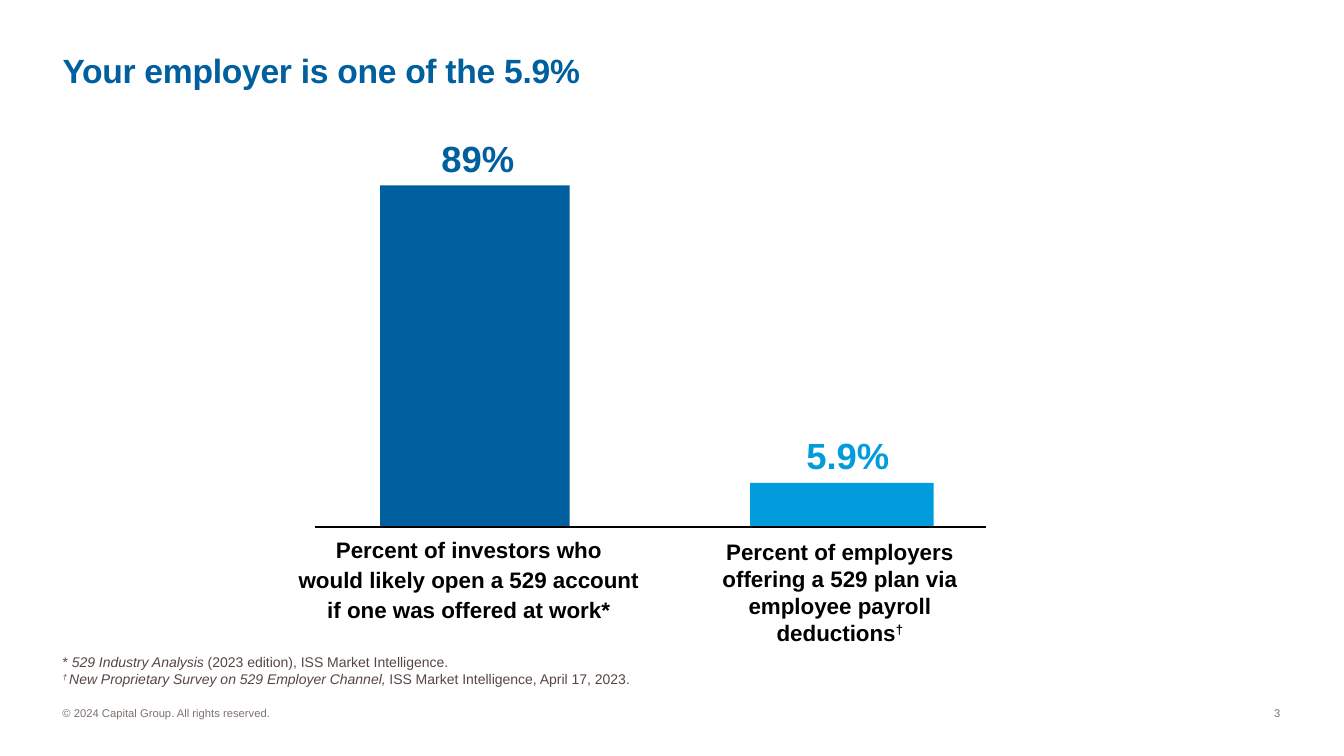
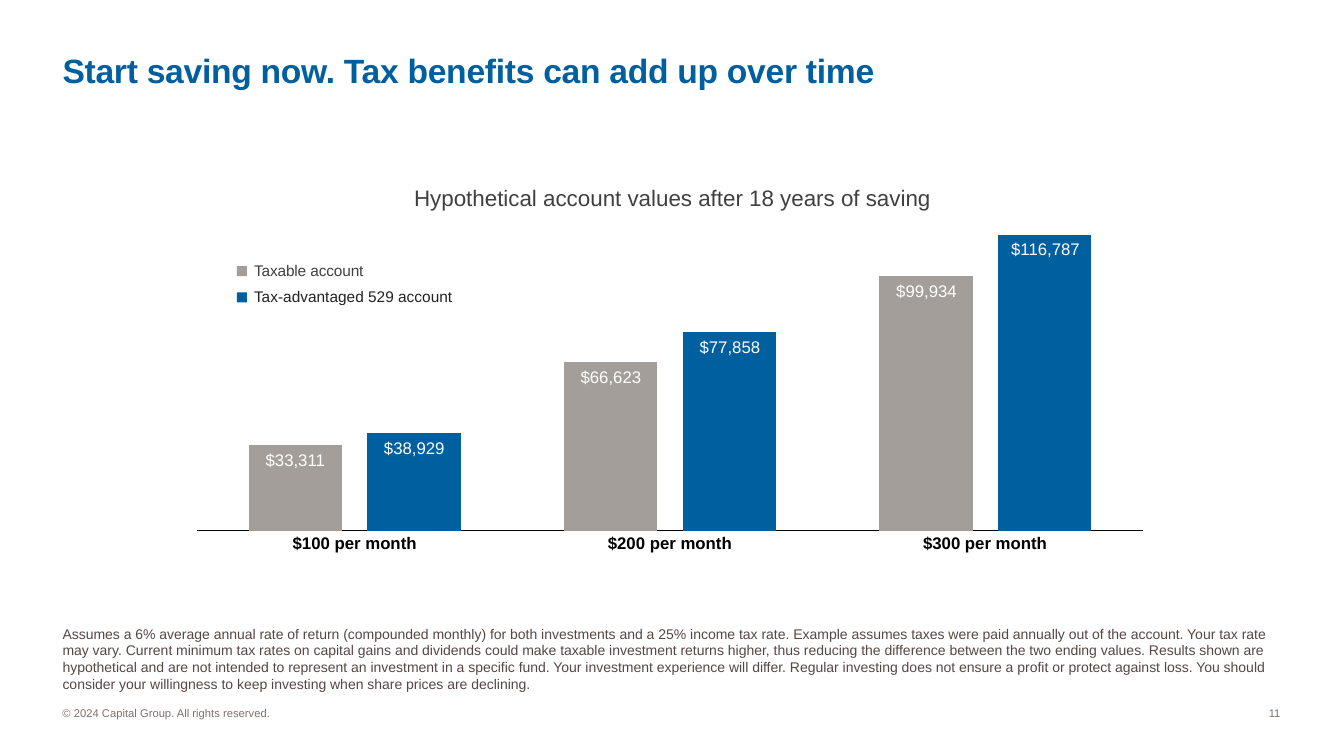
from lxml.etree import SubElement
from pptx import Presentation
from pptx.chart.data import CategoryChartData as Data
from pptx.dml.color import RGBColor
from pptx.enum.chart import XL_CHART_TYPE as Kind, XL_TICK_LABEL_POSITION as Label, XL_TICK_MARK as Tick
from pptx.enum.shapes import MSO_CONNECTOR as Link, MSO_SHAPE as Form
from pptx.enum.text import MSO_ANCHOR as Anchor, MSO_AUTO_SIZE as Fit, PP_ALIGN as Align
from pptx.oxml import parse_xml
from pptx.oxml.ns import nsdecls, qn
from pptx.util import Inches, Pt

FONT = "Arial"
BLUE, SKY, GREY = "005F9E", "009CDC", "A39E99"
BLACK, WHITE, DARK, INK = "000000", "FFFFFF", "404040", "222222"
BROWN, FAINT = "554742", "7D726D"
LEFT, WIDE = 0.62, 12.08


def color(code):
    return RGBColor.from_string(code)


class Deck:
    """Hold the shared style and the current slide."""

    def __init__(self):
        self.show = Presentation()
        self.show.slide_width = Inches(13.33)
        self.show.slide_height = Inches(7.5)
        self.slide = None

    def start(self, title, number):
        self.slide = self.show.slides.add_slide(self.show.slide_layouts[5])
        head = self.slide.shapes.title
        self.place(head, LEFT, 0, WIDE, 0.9)
        self.fill(head.text_frame, [title], 24, BLUE, bold=True, anchor=Anchor.BOTTOM, track=-0.2)
        head.text_frame.paragraphs[0].line_spacing = 0.95
        self.text("© 2024 Capital Group. All rights reserved.", LEFT, 7, 2.5, 0.14, 8, FAINT,
                  anchor=Anchor.BOTTOM)
        self.text(number, 11.92, 7, 0.78, 0.14, 8, FAINT, align=Align.RIGHT, anchor=Anchor.BOTTOM)

    def place(self, shape, x, y, w, h):
        shape.left, shape.top, shape.width, shape.height = map(Inches, (x, y, w, h))

    def fill(self, frame, lines, size, tint, bold=False, align=Align.LEFT,
             anchor=Anchor.TOP, track=0, gap=0):
        frame.word_wrap = True
        frame.auto_size = Fit.NONE
        frame.vertical_anchor = anchor
        frame.margin_left = frame.margin_right = frame.margin_top = frame.margin_bottom = 0
        for row, line in enumerate(lines):
            para = frame.add_paragraph() if row else frame.paragraphs[0]
            para.alignment = align
            para.space_before = Pt(gap if row else 0)
            for part, mark in [(line, "")] if isinstance(line, str) else line:
                run = para.add_run()
                run.text = part
                font = run.font
                font.name, font.size, font.bold = FONT, Pt(size), bold
                font.italic = "i" in mark
                font.color.rgb = color(tint)
                props = run._r.get_or_add_rPr()
                if track:
                    props.set("spc", str(round(track * 100)))
                if "^" in mark:
                    props.set("baseline", "30000")

    def text(self, lines, x, y, w, h, size, tint, **style):
        box = self.slide.shapes.add_textbox(*map(Inches, (x, y, w, h)))
        self.fill(box.text_frame, [lines] if isinstance(lines, str) else lines, size, tint, **style)

    def note(self, lines, base):
        self.text(lines, LEFT, base - 0.7, 12.01, 0.7, 10, BROWN, anchor=Anchor.BOTTOM)

    def block(self, x, y, w, h, tint):
        box = self.slide.shapes.add_shape(Form.RECTANGLE, *map(Inches, (x, y, w, h)))
        box.shadow.inherit = False
        box.fill.solid()
        box.fill.fore_color.rgb = color(tint)
        box.line.fill.background()

    def rule(self, x, y, end):
        line = self.slide.shapes.add_connector(Link.STRAIGHT, *map(Inches, (x, y, end, y)))
        line.line.color.rgb = color(BLACK)
        line.line.width = Pt(1)
        SubElement(line._element.spPr, qn("a:effectLst"))

    def chart(self, cats, rows, top, x, y, w, h, inner):
        data = Data()
        data.categories = cats
        for name, vals, _ in rows:
            data.add_series(name, vals)
        frame = self.slide.shapes.add_chart(
            Kind.COLUMN_CLUSTERED, *map(Inches, (x, y, w, h)), data)
        chart = frame.chart
        chart.has_legend = chart.has_title = False
        chart.font.name, chart.font.size = FONT, Pt(10)
        chart.font.color.rgb = color(BLACK)
        plot = chart.plots[0]
        plot.vary_by_categories = False
        plot.gap_width, plot.overlap = 111, -27
        for bars, (_, _, tint) in zip(plot.series, rows):
            bars.format.fill.solid()
            bars.format.fill.fore_color.rgb = color(tint)
        base, side = chart.category_axis, chart.value_axis
        for axis in (base, side):
            axis.major_tick_mark = axis.minor_tick_mark = Tick.NONE
            axis.has_major_gridlines = False
        font = base.tick_labels.font
        font.name, font.size, font.bold = FONT, Pt(12), True
        font.color.rgb = color(BLACK)
        base.format.line.color.rgb = color(BLACK)
        base.format.line.width = Pt(0.5)
        side.tick_label_position = Label.NONE
        side.minimum_scale, side.maximum_scale = 0, top
        side.format.line.fill.background()
        self.fit(chart, inner)

    def fit(self, chart, inner):
        area = chart._chartSpace.chart.plotArea
        for old in area.findall(qn("c:layout")):
            area.remove(old)
        modes = "".join(f'<c:{key}Mode val="edge"/>' for key in "xy")
        sizes = "".join(f'<c:{key} val="{val}"/>' for key, val in zip("xywh", inner))
        area.insert(0, parse_xml(
            f'<c:layout {nsdecls("c")}><c:manualLayout><c:layoutTarget val="inner"/>'
            f"{modes}{sizes}</c:manualLayout></c:layout>"))


def demand(deck):
    deck.start("Your employer is one of the 5.9%", "3")
    deck.note([
        [("* ", ""), ("529 Industry Analysis", "i"), (" (2023 edition), ISS Market Intelligence.", "")],
        [("† ", "i^"), ("New Proprietary Survey on 529 Employer Channel, ", "i"),
         ("ISS Market Intelligence, April 17, 2023.", "")],
    ], 6.82)
    floor = 5.23
    for x, w, h, mid, share, tint in (
        (3.77, 1.88, 3.39, 4.74, "89%", BLUE),
        (7.44, 1.82, 0.44, 8.41, "5.9%", SKY),
    ):
        deck.block(x, floor - h, w, h, tint)
        deck.text(share, mid - 0.6, floor - h - 0.49, 1.2, 0.44, 26, tint, bold=True, align=Align.CENTER)
    deck.rule(3.12, floor, 9.78)
    style = dict(bold=True, align=Align.CENTER)
    deck.text([
        "Percent of investors who",
        "would likely open a 529 account",
        "if one was offered at work*",
    ], 2.75, 5.32, 3.8, 0.85, 16, BLACK, gap=2, **style)
    deck.text([[
        ("Percent of employers offering a 529 plan via employee payroll deductions", ""), ("†", "^"),
    ]], 6.86, 5.34, 2.94, 1.1, 16, BLACK, **style)


def growth(deck):
    deck.start("Start saving now. Tax benefits can add up over time", "11")
    cats = [f"${pay} per month" for pay in (100, 200, 300)]
    rows = (
        ("Taxable account", (29, 57, 86), GREY),
        ("Tax-advantaged 529 account", (33, 67, 100), BLUE),
    )
    tags = (("$33,311", "$66,623", "$99,934"), ("$38,929", "$77,858", "$116,787"))
    keys = ((DARK, -0.1), (INK, 0))
    deck.chart(cats, rows, 120, 1.75, 1.56, 9.78, 4.1, (0.021, 0.044, 0.959, 0.86))
    deck.text("Hypothetical account values after 18 years of saving", 3.92, 1.83, 5.5, 0.28, 16, DARK,
              align=Align.CENTER)
    for row, (name, vals, tint) in enumerate(rows):
        y = 2.59 + 0.26 * row
        ink, track = keys[row]
        deck.block(2.35, y + 0.05, 0.1, 0.1, tint)
        deck.text(name, 2.52, y, 2.2, 0.19, 11, ink, track=track)
        for col, (val, tag) in enumerate(zip(vals, tags[row])):
            deck.text(tag, 2.48 + 3.13 * col + 1.18 * row, 5.26 - 2.94 * val / 100, 0.9, 0.3, 12, WHITE,
                      align=Align.CENTER, anchor=Anchor.MIDDLE)
    deck.note(
        "Assumes a 6% average annual rate of return (compounded monthly) for both investments and a 25% "
        "income tax rate. Example assumes taxes were paid annually out of the account. Your tax rate may "
        "vary. Current minimum tax rates on capital gains and dividends could make taxable investment "
        "returns higher, thus reducing the difference between the two ending values. Results shown are "
        "hypothetical and are not intended to represent an investment in a specific fund. Your investment "
        "experience will differ. Regular investing does not ensure a profit or protect against loss. You "
        "should consider your willingness to keep investing when share prices are declining.", 6.87)


def main():
    deck = Deck()
    demand(deck)
    growth(deck)
    deck.show.save("out.pptx")


if __name__ == "__main__":
    main()
